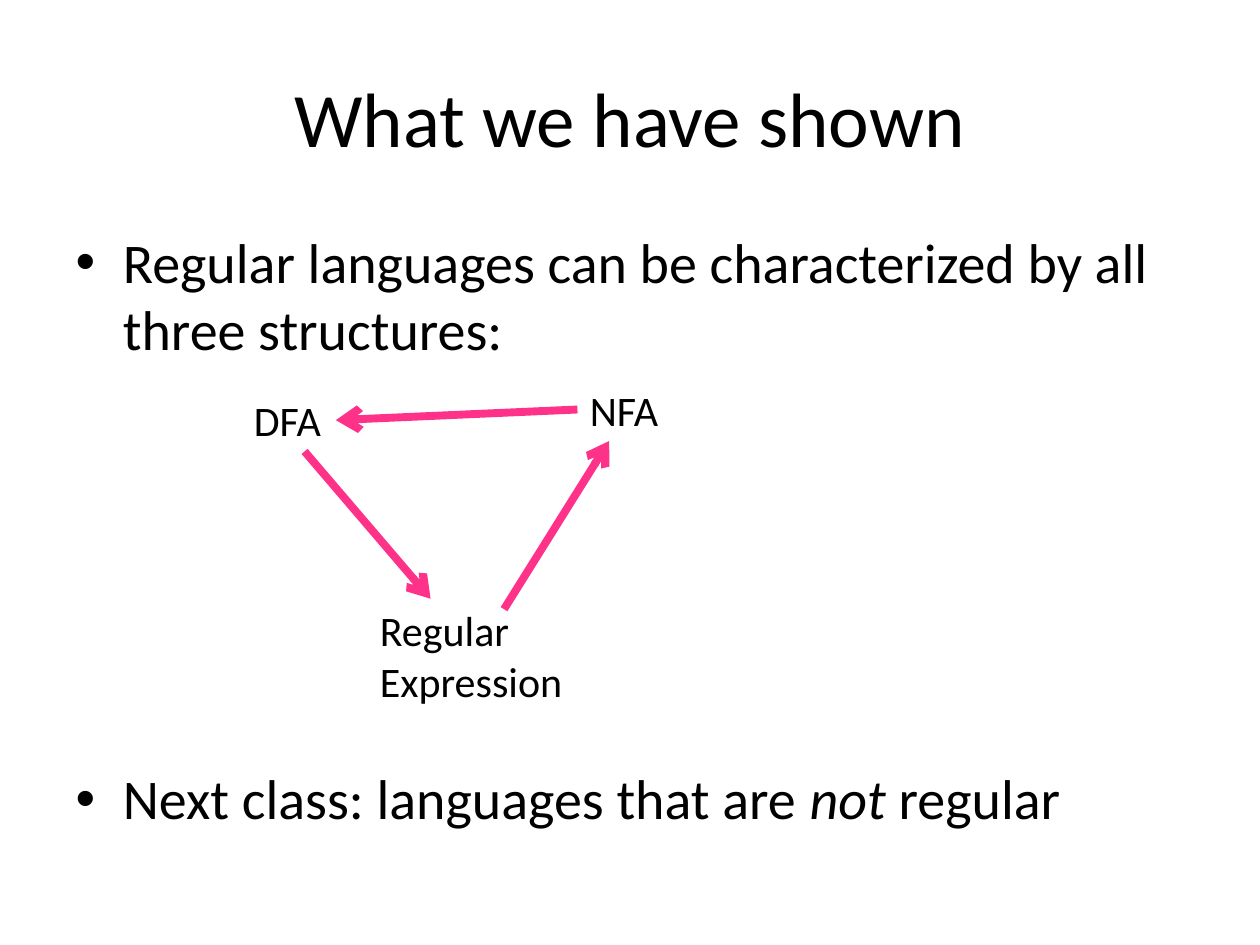
from dataclasses import dataclass
from typing import Optional

from lxml.etree import SubElement
from pptx import Presentation
from pptx.dml.color import RGBColor
from pptx.enum.shapes import MSO_CONNECTOR as Conn
from pptx.enum.text import MSO_ANCHOR as Anchor, MSO_AUTO_SIZE as AutoSize, PP_ALIGN as Align
from pptx.oxml.ns import qn
from pptx.util import Cm, Pt

COLORS = {"text": "000000", "arrow": "FE3288"}
FONT = "Calibri"
TOP, LEFT, BOTTOM, RIGHT = 0, 1, 2, 3


@dataclass
class Label:
    text: str
    x: float
    y: float
    w: float = 2.54
    h: float = 1.27


@dataclass
class Arrow:
    start: tuple[float, float]
    end: tuple[float, float]
    source: Optional[str] = None
    side: int = TOP


LABELS = [
    Label("NFA", 11.64, 7.62),
    Label("Regular Expression", 7.41, 12.07, 5.72, 2.31),
    Label("DFA", 4.87, 7.83),
]
ARROWS = [
    Arrow((6.14, 9.1), (8.68, 12.07), "DFA", BOTTOM),
    Arrow((10.16, 12.28), (12.28, 8.89)),
    Arrow((11.64, 8.26), (6.77, 8.47), "NFA", LEFT),
]


def place(sp, x: float, y: float, w: float, h: float) -> None:
    sp.left, sp.top, sp.width, sp.height = Cm(x), Cm(y), Cm(w), Cm(h)


def style(p, size: int) -> None:
    for r in p.runs:
        r.font.name = FONT
        r.font.size = Pt(size)
        r.font.color.rgb = RGBColor.from_string(COLORS["text"])


def add_label(s, label: Label):
    sp = s.shapes.add_textbox(Cm(label.x), Cm(label.y), Cm(label.w), Cm(label.h))
    tf = sp.text_frame
    tf.word_wrap = True
    tf.auto_size = AutoSize.SHAPE_TO_FIT_TEXT
    tf.text = label.text
    style(tf.paragraphs[0], 24)
    return sp


def add_arrow(s, arrow: Arrow, boxes: dict) -> None:
    (x1, y1), (x2, y2) = arrow.start, arrow.end
    line = s.shapes.add_connector(Conn.STRAIGHT, Cm(x1), Cm(y1), Cm(x2), Cm(y2))
    if arrow.source:
        line.begin_connect(boxes[arrow.source], arrow.side)
    line.line.color.rgb = RGBColor.from_string(COLORS["arrow"])
    line.line.width = Pt(4.5)
    sp_pr = line._element.spPr
    SubElement(sp_pr.find(qn("a:ln")), qn("a:tailEnd"), type="arrow")
    SubElement(sp_pr, qn("a:effectLst"))


def fill_title(sp) -> None:
    place(sp, 1.27, 0.76, 22.86, 3.18)
    tf = sp.text_frame
    tf.text = "What we have shown"
    tf.vertical_anchor = Anchor.MIDDLE
    p = tf.paragraphs[0]
    p.alignment = Align.CENTER
    style(p, 44)


def fill_body(sp) -> None:
    place(sp, 1.27, 4.45, 22.86, 12.57)
    tf = sp.text_frame
    tf.auto_size = AutoSize.NONE
    tf.text = "Regular languages can be characterized by all three structures:"
    p = tf.add_paragraph()
    p.space_before = Pt(230)
    for text in ("Next class: languages that are ", "not", " regular"):
        r = p.add_run()
        r.text = text
        r.font.italic = text == "not"
    for p in tf.paragraphs:
        style(p, 32)


def main() -> None:
    prs = Presentation()
    prs.slide_width, prs.slide_height = Cm(25.4), Cm(19.05)
    s = prs.slides.add_slide(prs.slide_layouts[1])
    fill_title(s.shapes.title)
    fill_body(s.placeholders[1])
    boxes = {label.text: add_label(s, label) for label in LABELS}
    for arrow in ARROWS:
        add_arrow(s, arrow, boxes)
    prs.save("out.pptx")


if __name__ == "__main__":
    main()
